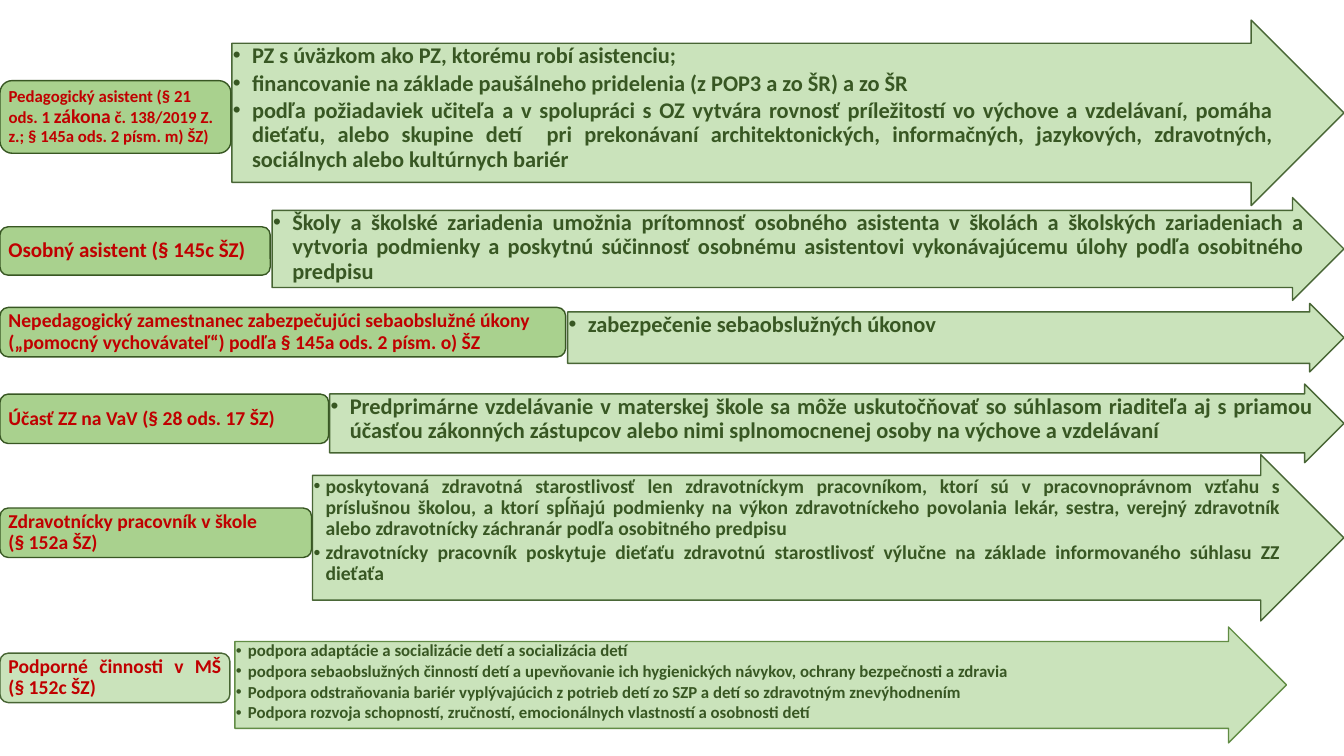
from lxml.etree import SubElement
from pptx import Presentation
from pptx.dml.color import RGBColor
from pptx.enum.shapes import MSO_SHAPE
from pptx.enum.text import MSO_ANCHOR, PP_ALIGN
from pptx.oxml.ns import qn
from pptx.util import Pt

PX = 9144
DARK, EDGE, RED = "385723", "548235", "C00000"
GREEN, PALE = "A9D18E", "C5E0B4"
LEFT, EVEN = PP_ALIGN.LEFT, PP_ALIGN.JUSTIFY


def color(code):
    return RGBColor.from_string(code)


def assign(target, values):
    for name, value in values.items():
        setattr(target, name, value)


class Board:
    font = "Calibri"

    def __init__(self, deck):
        self.slide = deck.slides.add_slide(deck.slide_layouts[6])

    def block(self, kind, box, fill, line, clear, pads, anchor):
        shape = self.slide.shapes.add_shape(kind, *[n * PX for n in box])
        shape.shadow.inherit = False
        shape.fill.solid()
        shape.fill.fore_color.rgb = color(fill)
        shape.line.color.rgb = color(line)
        shape.line.width = Pt(1)
        if clear:
            for tint in shape._element.spPr.iter(qn("a:srgbClr")):
                SubElement(tint, qn("a:alpha"), val="90000")
        wide, high = pads
        assign(shape.text_frame, {
            "word_wrap": True, "vertical_anchor": anchor,
            "margin_left": wide * PX, "margin_right": wide * PX,
            "margin_top": high * PX, "margin_bottom": high * PX})
        return shape

    def compose(self, para, parts, tint, align, after):
        assign(para, {"alignment": align, "line_spacing": 0.9,
                      "space_after": Pt(after)})
        for text, size in parts:
            if text == "\n":
                para.add_line_break()
                continue
            run = para.add_run()
            run.text = text
            assign(run.font, {"name": self.font, "size": Pt(size), "bold": True})
            run.font.color.rgb = color(tint)

    def label(self, box, parts, pads=(6, 3), fill=GREEN, clear=False, align=LEFT):
        shape = self.block(MSO_SHAPE.ROUNDED_RECTANGLE, box, fill, DARK, clear,
                           pads, MSO_ANCHOR.MIDDLE)
        para = shape.text_frame.paragraphs[0]
        self.compose(para, parts, RED, align, parts[0][1] * 0.35)

    def arrow(self, box, size, ragged=(), even=(), indent=19, line=DARK):
        shape = self.block(MSO_SHAPE.RIGHT_ARROW, box, PALE, line, True,
                           (1, 1), MSO_ANCHOR.TOP)
        shape.adjustments[0], shape.adjustments[1] = 0.75, 0.5
        frame = shape.text_frame
        lines = [(text, LEFT) for text in ragged] + [(text, EVEN) for text in even]
        for index, (text, align) in enumerate(lines):
            para = frame.add_paragraph() if index else frame.paragraphs[0]
            para.level = 1
            props = para._p.get_or_add_pPr()
            props.set("marL", str(indent * PX))
            props.set("indent", str(-indent * PX))
            SubElement(props, qn("a:buFont"), typeface="Arial")
            SubElement(props, qn("a:buChar"), char="•")
            self.compose(para, [(text, size)], DARK, align, size * 0.15)


def main():
    deck = Presentation()
    assign(deck, {"slide_width": 1333 * PX, "slide_height": 750 * PX})
    board = Board(deck)

    board.arrow((230, 20, 1103, 184), 16, ragged=[
        "PZ s úväzkom ako PZ, ktorému robí asistenciu;",
        "financovanie na základe paušálneho pridelenia (z POP3 a zo ŠR) a zo ŠR",
    ], even=[
        "podľa požiadaviek učiteľa a v spolupráci s OZ vytvára rovnosť príležitostí "
        "vo výchove a vzdelávaní, pomáha dieťaťu, alebo skupine detí  pri prekonávaní "
        "architektonických, informačných, jazykových, zdravotných, sociálnych alebo "
        "kultúrnych bariér",
    ])
    board.label((0, 80, 229, 72), [
        ("Pedagogický asistent (§ 21 ods. 1 ", 12), ("zákona", 14),
        (" č. 138/2019 Z. z.; § 145a ods. 2 písm. m) ŠZ)", 12)], pads=(5, 3))

    board.arrow((270, 196, 1063, 102), 16, even=[
        "Školy a školské zariadenia umožnia prítomnosť osobného asistenta v školách "
        "a školských zariadeniach a vytvoria podmienky a poskytnú súčinnosť osobnému "
        "asistentovi vykonávajúcemu úlohy podľa osobitného predpisu",
    ])
    board.label((0, 225, 268, 48), [("Osobný asistent (§ 145c ŠZ)", 15)])

    board.arrow((563, 301, 770, 68), 16, ragged=["zabezpečenie sebaobslužných úkonov"])
    board.label((0, 305, 561, 49), [
        ("Nepedagogický zamestnanec zabezpečujúci sebaobslužné úkony "
         "(„pomocný vychovávateľ“) podľa § 145a ods. 2 písm. o) ŠZ", 14)])

    board.arrow((327, 381, 1006, 78), 16, even=[
        "Predprimárne vzdelávanie v materskej škole sa môže uskutočňovať so súhlasom "
        "riaditeľa aj s priamou účasťou zákonných zástupcov alebo nimi splnomocnenej "
        "osoby na výchove a vzdelávaní",
    ])
    board.label((0, 391, 326, 49), [("Účasť ZZ na VaV (§ 28 ods. 17 ŠZ)", 14)])

    board.arrow((310, 451, 1023, 165), 14, indent=12, even=[
        "poskytovaná zdravotná starostlivosť len zdravotníckym pracovníkom, ktorí sú "
        "v pracovnoprávnom vzťahu s príslušnou školou, a ktorí spĺňajú podmienky na "
        "výkon zdravotníckeho povolania lekár, sestra, verejný zdravotník alebo "
        "zdravotnícky záchranár podľa osobitného predpisu",
        "zdravotnícky pracovník poskytuje dieťaťu zdravotnú starostlivosť výlučne na "
        "základe informovaného súhlasu ZZ dieťaťa",
    ])
    board.label((0, 504, 309, 49), [
        ("Zdravotnícky pracovník v škole", 14), ("\n", 14), ("(§ 152a ŠZ)", 14)])

    board.arrow((233, 622, 1043, 115), 12, indent=12, line=EDGE, ragged=[
        "podpora adaptácie a socializácie detí a socializácia detí",
        "podpora sebaobslužných činností detí a upevňovanie ich hygienických návykov, "
        "ochrany bezpečnosti a zdravia",
        "Podpora odstraňovania bariér vyplývajúcich z potrieb detí zo SZP a detí so "
        "zdravotným znevýhodnením",
        "Podpora rozvoja schopností, zručností, emocionálnych vlastností a osobnosti detí",
    ])
    board.label((0, 648, 228, 49), [("Podporné činnosti v MŠ (§ 152c ŠZ)", 14)],
                fill=PALE, clear=True, align=EVEN)

    deck.save("out.pptx")


if __name__ == "__main__":
    main()
